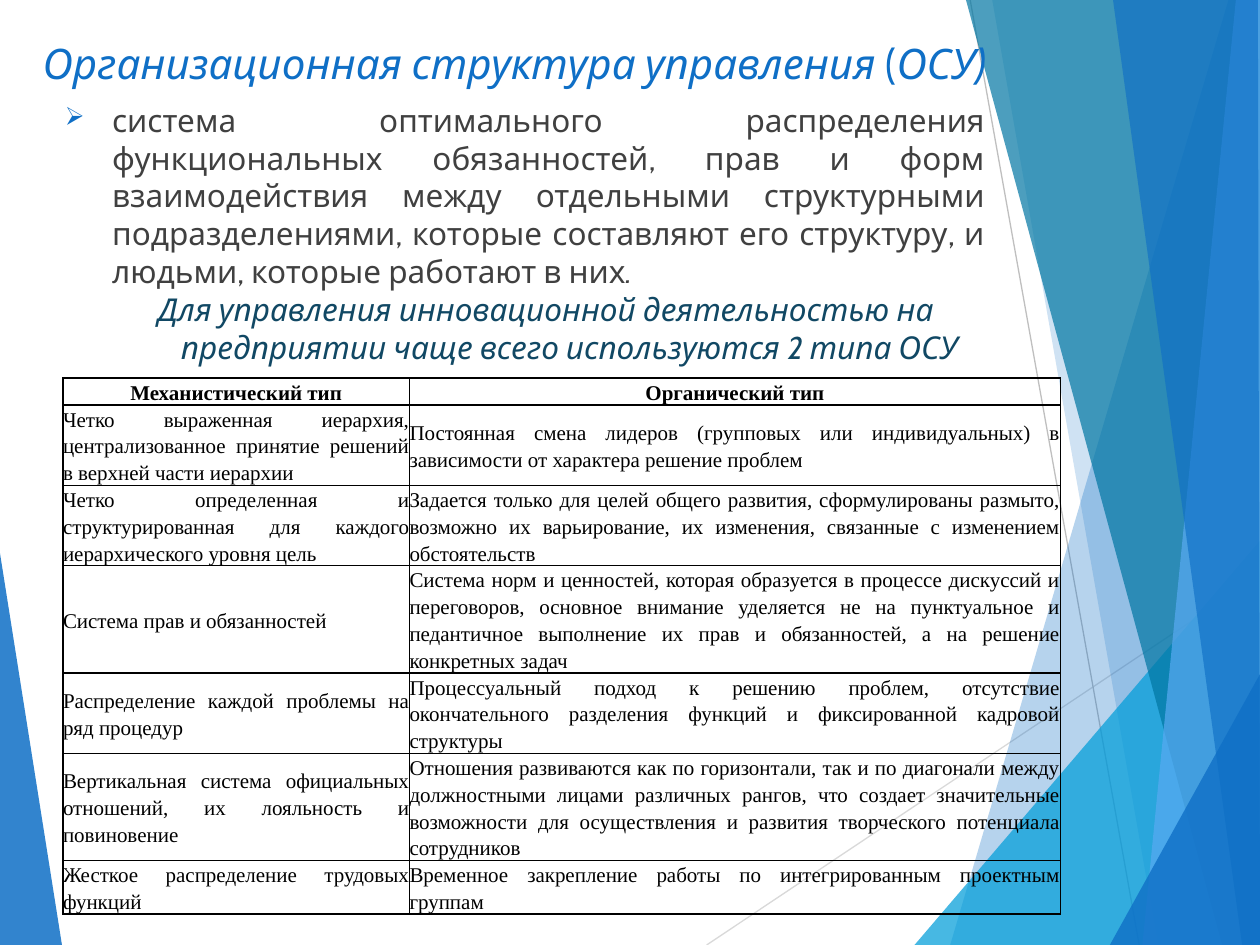
from lxml import etree
from pptx import Presentation
from pptx.dml.color import RGBColor
from pptx.enum.shapes import MSO_CONNECTOR
from pptx.enum.text import PP_ALIGN, MSO_ANCHOR
from pptx.oxml.ns import qn
from pptx.util import Emu, Inches, Pt

LINE = MSO_CONNECTOR.STRAIGHT
MIDDLE = MSO_ANCHOR.MIDDLE
CENTER, JUSTIFY = PP_ALIGN.CENTER, PP_ALIGN.JUSTIFY
WIDE, HIGH = Inches(10), Inches(7.5)
COLS, ROWS = 120, 90
HANG = 4.5
SANS, SERIF = "Cabin", "Times New Roman"
COLORS = {
    "blue": "0F6FC6", "cyan": "009DD9", "teal": "0076A3", "sky": "59AAF2",
    "navy": "114864", "text": "404040", "black": "000000",
    "pale": "D9D9D9", "gray": "BFBFBF",
}
RAYS = [
    ("pale", (67.3, 90), (120, 54.8)),
    ("gray", (92.4, 0), (108.5, 90)),
]
FACETS = [
    ("blue", 30, [(117, 0), (90.5, 90), (120, 90), (120, 0)]),
    ("blue", 20, [(94.5, 0), (110.3, 90), (120, 90), (120, 0)]),
    ("cyan", 72, [(87.1, 90), (120, 51.5), (120, 90)]),
    ("teal", 70, [(92, 0), (116.4, 90), (120, 90), (120, 0)]),
    ("sky", 70, [(117.7, 0), (108.8, 90), (120, 90), (120, 0)]),
    ("blue", 65, [(106, 0), (118.3, 90), (120, 90), (119.8, 0)]),
    ("blue", 80, [(105.7, 90), (120, 64.2), (120, 90)]),
]
WEDGE = ("blue", 85, [(0, 52.7), (5.9, 90), (0, 90)])
TITLE = [("Организационная структура управления", True), (" (", False), ("ОСУ)", True)]
BODY = [
    ("система оптимального распределения функциональных обязанностей, прав и форм "
     "взаимодействия между отдельными структурными подразделениями, которые составляют "
     "его структуру, и людьми, которые работают в них", False),
    (".", True),
]
LEAD = [("Для управления инновационной деятельностью на предприятии чаще всего "
         "используются 2 типа ОСУ", True)]
TYPES = [
    (2.4, "Механистический тип", "Органический тип"),
    (7, "Четко выраженная иерархия, централизованное принятие решений в верхней части иерархии",
     "Постоянная смена лидеров (групповых или индивидуальных) в зависимости от характера "
     "решение проблем"),
    (7, "Четко определенная и структурированная для каждого иерархического уровня цель",
     "Задается только для целей общего развития, сформулированы размыто, возможно их "
     "варьирование, их изменения, связанные с изменением обстоятельств"),
    (8, "Система прав и обязанностей",
     "Система норм и ценностей, которая образуется в процессе дискуссий и переговоров, "
     "основное внимание уделяется не на пунктуальное и педантичное выполнение их прав и "
     "обязанностей, а на решение конкретных задач"),
    (6.1, "Распределение каждой проблемы на ряд процедур",
     "Процессуальный подход к решению проблем, отсутствие окончательного разделения "
     "функций и фиксированной кадровой структуры"),
    (6.8, "Вертикальная система официальных отношений, их лояльность и повиновение",
     "Отношения развиваются как по горизонтали, так и по диагонали между должностными "
     "лицами различных рангов, что создает значительные возможности для осуществления и "
     "развития творческого потенциала сотрудников"),
    (4.1, "Жесткое распределение трудовых функций",
     "Временное закрепление работы по интегрированным проектным группам"),
]


def across(n):
    """Return the length of n grid columns."""
    return Emu(round(WIDE * n / COLS))


def down(n):
    """Return the length of n grid rows."""
    return Emu(round(HIGH * n / ROWS))


def rgb(name):
    """Return the named colour."""
    return RGBColor.from_string(COLORS[name])


def node(parent, tag, **attrs):
    """Append a drawing element and return it."""
    return etree.SubElement(parent, qn(tag), attrs)


def style(run, font, size, color):
    """Set the font, size and colour of a run."""
    run.font.name = font
    run.font.size = Pt(size)
    run.font.color.rgb = rgb(color)


def facet(slide, color, alpha, points):
    """Draw a translucent polygon."""
    spots = [(across(x), down(y)) for x, y in points]
    form = slide.shapes.build_freeform(*spots[0])
    form.add_line_segments(spots[1:], close=True)
    shape = form.convert_to_shape()
    shape.shadow.inherit = False
    shape.line.fill.background()
    shape.fill.solid()
    shape.fill.fore_color.rgb = rgb(color)
    tint = shape.fill._xPr.find(".//" + qn("a:srgbClr"))
    node(tint, "a:alpha", val=str(alpha * 1000))


def ray(slide, color, start, end):
    """Draw a thin straight line."""
    line = slide.shapes.add_connector(
        LINE, across(start[0]), down(start[1]), across(end[0]), down(end[1]))
    line.line.color.rgb = rgb(color)
    line.line.width = Pt(0.75)
    node(line._element.spPr, "a:effectLst")


def words(slide, box, parts, size, color, align):
    """Add a text box of one paragraph and return the paragraph."""
    left, top, width, height = box
    shape = slide.shapes.add_textbox(across(left), down(top), across(width), down(height))
    frame = shape.text_frame
    frame.word_wrap = True
    para = frame.paragraphs[0]
    para.alignment = align
    for text, slant in parts:
        run = para.add_run()
        run.text = text
        style(run, SANS, size, color)
        run.font.italic = slant
    return para


def hang(para, mark=None):
    """Give a paragraph a hanging indent and an optional bullet."""
    props = para._p.get_or_add_pPr()
    props.set("marL", str(across(HANG)))
    props.set("indent", str(-across(HANG)))
    if mark:
        node(node(props, "a:buClr"), "a:srgbClr", val=COLORS["blue"])
        node(props, "a:buSzPct", val="80000")
        node(props, "a:buChar", char=mark)


def edge(cell):
    """Give a cell thin black borders and no fill."""
    props = cell._tc.get_or_add_tcPr()
    for tag in ("a:lnL", "a:lnR", "a:lnT", "a:lnB"):
        line = node(props, tag, w=str(Pt(1)))
        node(node(line, "a:solidFill"), "a:srgbClr", val=COLORS["black"])
    cell.fill.background()


def fill(cell, text, head):
    """Write and format one table cell."""
    cell.text_frame.text = text
    cell.vertical_anchor = MIDDLE
    cell.margin_left = cell.margin_right = cell.margin_top = cell.margin_bottom = 0
    para = cell.text_frame.paragraphs[0]
    para.alignment = CENTER if head else JUSTIFY
    para.line_spacing = Pt(15.3)
    run = para.runs[0]
    style(run, SERIF, 12, "black")
    run.font.bold = head
    edge(cell)


def grid(slide, left, top, widths, rows):
    """Add the table of the two types."""
    tall = sum(row[0] for row in rows)
    table = slide.shapes.add_table(
        len(rows), len(widths), across(left), down(top), across(sum(widths)), down(tall)).table
    table.first_row = table.horz_banding = False
    for col, width in zip(table.columns, widths):
        col.width = across(width)
    for r, (height, *texts) in enumerate(rows):
        table.rows[r].height = down(height)
        for c, text in enumerate(texts):
            fill(table.cell(r, c), text, r == 0)


def main():
    """Build and save the slide."""
    deck = Presentation()
    deck.slide_width, deck.slide_height = WIDE, HIGH
    slide = deck.slides.add_slide(deck.slide_layouts[6])
    facet(slide, *WEDGE)
    for item in RAYS:
        ray(slide, *item)
    for item in FACETS:
        facet(slide, *item)
    words(slide, (0, 3, 98, 7), TITLE, 24, "blue", CENTER)
    hang(words(slide, (5, 9, 90, 21), BODY, 18, "text", JUSTIFY), "➢")
    hang(words(slide, (7, 27, 90, 9), LEAD, 18, "navy", CENTER))
    grid(slide, 6, 36, (33, 62), TYPES)
    deck.save("out.pptx")


if __name__ == "__main__":
    main()
